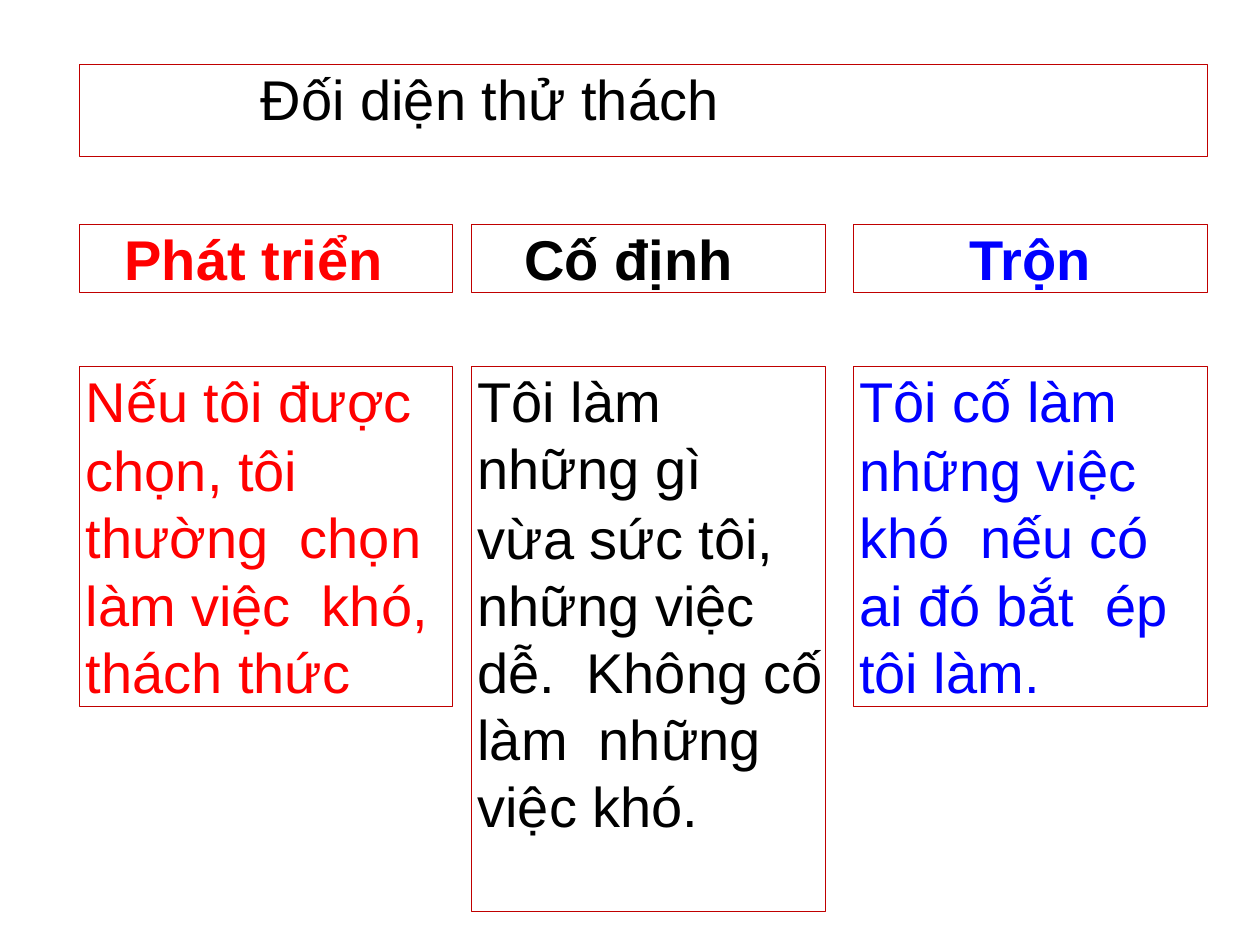
from pptx import Presentation
from pptx.dml.color import RGBColor
from pptx.enum.text import MSO_ANCHOR, MSO_AUTO_SIZE, PP_ALIGN
from pptx.util import Inches, Pt

COLORS = {"border": "C00000", "black": "000000", "red": "FF0000", "blue": "0000FF"}
LEFT, RIGHT = 0.63, 9.58
ROW_HEIGHT = 0.54
TITLE_TOP, HEADING_TOP, BODY_TOP = 0.51, 1.78, 2.91
COLUMNS = [
    (LEFT, 2.96, "red", "Phát triển", 0.36, PP_ALIGN.LEFT, 5,
     ["Nếu tôi được", "chọn, tôi thường  chọn làm việc  khó, thách thức"]),
    (3.74, 2.81, "black", "Cố định", 0.42, PP_ALIGN.LEFT, 8,
     ["Tôi làm những gì",
      "vừa sức tôi,  những việc dễ.  Không cố làm  những việc khó."]),
    (6.77, 2.81, "blue", "Trộn", 0, PP_ALIGN.CENTER, 5,
     ["Tôi cố làm", "những việc khó  nếu có ai đó bắt  ép tôi làm."]),
]


def format_box(shape, box, lines, color, indent, bold=False, align=PP_ALIGN.LEFT):
    shape.left, shape.top, shape.width, shape.height = map(Inches, box)
    shape.line.color.rgb = RGBColor.from_string(COLORS["border"])
    shape.line.width = Pt(0.36)
    text_frame = shape.text_frame
    text_frame.text = "\n".join(lines)
    text_frame.word_wrap = True
    text_frame.auto_size = MSO_AUTO_SIZE.SHAPE_TO_FIT_TEXT
    text_frame.vertical_anchor = MSO_ANCHOR.TOP
    text_frame.margin_left = Inches(indent)
    text_frame.margin_top = text_frame.margin_right = text_frame.margin_bottom = 0
    for index, paragraph in enumerate(text_frame.paragraphs):
        paragraph.alignment = align
        paragraph.space_before = Pt(1.1 if index else 0)
        for run in paragraph.runs:
            run.font.name = "Arial"
            run.font.size = Pt(32)
            run.font.bold = bold
            run.font.color.rgb = RGBColor.from_string(COLORS[color])


presentation = Presentation()
presentation.slide_width, presentation.slide_height = Inches(10), Inches(7.5)
slide = presentation.slides.add_slide(presentation.slide_layouts[5])

format_box(slide.shapes.title, (LEFT, TITLE_TOP, RIGHT - LEFT, ROW_HEIGHT),
           ["Đối diện thử thách"], "black", 1.44)

for left, width, color, heading, indent, align, rows, body in COLUMNS:
    format_box(slide.shapes.add_textbox(0, 0, 0, 0),
               (left, HEADING_TOP, width, ROW_HEIGHT),
               [heading], color, indent, True, align)
    format_box(slide.shapes.add_textbox(0, 0, 0, 0),
               (left, BODY_TOP, width, rows * ROW_HEIGHT),
               body, color, 0.05)

presentation.save("out.pptx")
